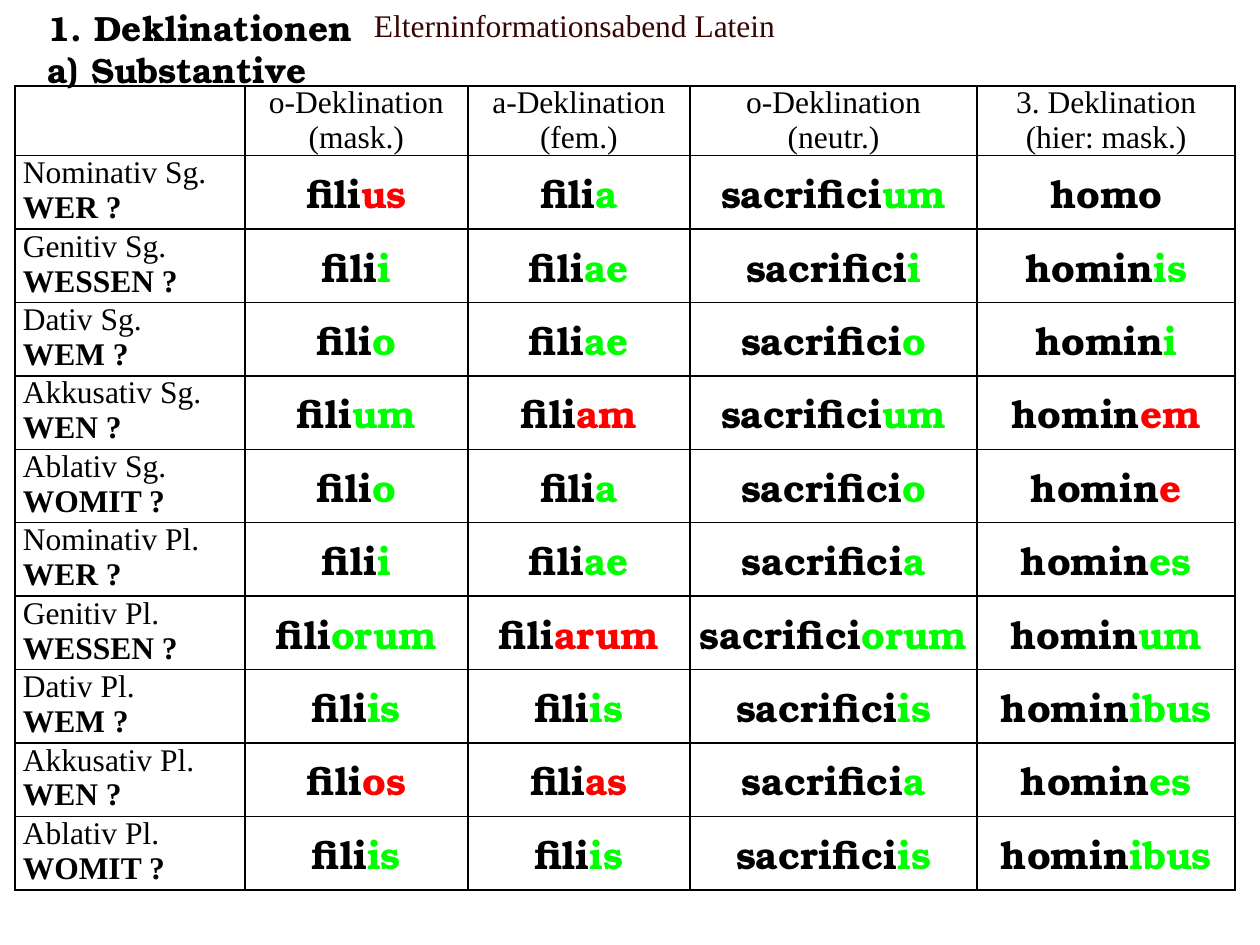
from dataclasses import dataclass

from lxml import etree
from pptx import Presentation
from pptx.dml.color import RGBColor
from pptx.enum.text import MSO_ANCHOR, PP_ALIGN
from pptx.oxml.ns import qn
from pptx.util import Cm, Pt

CENTER, JUSTIFY, LEFT = PP_ALIGN.CENTER, PP_ALIGN.JUSTIFY, PP_ALIGN.LEFT
TOP, MIDDLE = MSO_ANCHOR.TOP, MSO_ANCHOR.MIDDLE


@dataclass(frozen=True)
class Theme:
    serif: str = "Times New Roman"
    display: str = "TeX Gyre Bonum"
    ink: str = "000000"
    regular: str = "00FF00"
    distinctive: str = "FF0000"
    event: str = "380404"
    label_size: int = 18
    heading_size: int = 20
    form_size: int = 22
    border_width: int = 1


THEME = Theme()
COLUMN_WIDTHS = [4.64, 4.49, 4.48, 5.79, 5.2]
HEADER_HEIGHT, CASE_HEIGHT = 1.4, 1.48
HEADERS = [
    "o-Deklination (mask.)",
    "a-Deklination (fem.)",
    "o-Deklination (neutr.)",
    "3. Deklination (hier: mask.)",
]
STEMS = ["fili", "fili", "sacrifici", "homin"]
WHOLE_FORMS = {"homo"}
DISTINCTIVE_ENDINGS = {"us", "am", "em", "e", "arum", "os", "as"}
CASES = [
    ("Nominativ Sg.", "WER ?", ["us", "a", "um", "homo"]),
    ("Genitiv Sg.", "WESSEN ?", ["i", "ae", "i", "is"]),
    ("Dativ Sg.", "WEM ?", ["o", "ae", "o", "i"]),
    ("Akkusativ Sg.", "WEN ?", ["um", "am", "um", "em"]),
    ("Ablativ Sg.", "WOMIT ?", ["o", "a", "o", "e"]),
    ("Nominativ Pl.", "WER ?", ["i", "ae", "a", "es"]),
    ("Genitiv Pl.", "WESSEN ?", ["orum", "arum", "orum", "um"]),
    ("Dativ Pl.", "WEM ?", ["is", "is", "is", "ibus"]),
    ("Akkusativ Pl.", "WEN ?", ["os", "as", "a", "es"]),
    ("Ablativ Pl.", "WOMIT ?", ["is", "is", "is", "ibus"]),
]


def add_run(paragraph, text, font, size, color=THEME.ink, bold=False):
    run = paragraph.add_run()
    run.text = text
    run.font.name = font
    run.font.size = Pt(size)
    run.font.bold = bold
    run.font.color.rgb = RGBColor.from_string(color)


def add_label(paragraph, text, align, bold=False):
    paragraph.alignment = align
    add_run(paragraph, text, THEME.serif, THEME.label_size, bold=bold)


def add_form(paragraph, stem, ending):
    paragraph.alignment = CENTER
    if ending in WHOLE_FORMS:
        parts = [(ending, THEME.ink)]
    else:
        distinctive = ending in DISTINCTIVE_ENDINGS
        parts = [(stem, THEME.ink), (ending, THEME.distinctive if distinctive else THEME.regular)]
    for text, color in parts:
        add_run(paragraph, text, THEME.display, THEME.form_size, color, bold=True)


def format_cell(cell, anchor):
    cell.margin_left = cell.margin_right = Cm(0.16)
    cell.margin_top = cell.margin_bottom = 0
    cell.vertical_anchor = anchor
    properties = cell._tc.get_or_add_tcPr()
    for side in ("lnL", "lnR", "lnT", "lnB"):
        border = etree.SubElement(properties, qn(f"a:{side}"), w=str(Pt(THEME.border_width)))
        fill = etree.SubElement(border, qn("a:solidFill"))
        etree.SubElement(fill, qn("a:srgbClr"), val=THEME.ink)
    cell.fill.background()


def add_declension_table(slide):
    height = HEADER_HEIGHT + CASE_HEIGHT * len(CASES)
    table = slide.shapes.add_table(
        len(CASES) + 1, len(COLUMN_WIDTHS), Cm(0.3), Cm(1.73), Cm(sum(COLUMN_WIDTHS)), Cm(height)
    ).table
    table.first_row = table.horz_banding = False
    for column, width in zip(table.columns, COLUMN_WIDTHS):
        column.width = Cm(width)
    for index, row in enumerate(table.rows):
        row.height = Cm(CASE_HEIGHT if index else HEADER_HEIGHT)
        for position, cell in enumerate(row.cells):
            format_cell(cell, MIDDLE if index and position else TOP)

    for column, header in enumerate(HEADERS, 1):
        add_label(table.cell(0, column).text_frame.paragraphs[0], header, CENTER)
    for row, (case, question, endings) in enumerate(CASES, 1):
        label = table.cell(row, 0).text_frame
        add_label(label.paragraphs[0], case, JUSTIFY)
        add_label(label.add_paragraph(), question, JUSTIFY, bold=True)
        for column, (stem, ending) in enumerate(zip(STEMS, endings), 1):
            add_form(table.cell(row, column).text_frame.paragraphs[0], stem, ending)


def add_text(slide, left, width, height, lines, font, size, color, bold=False):
    frame = slide.shapes.add_textbox(Cm(left), 0, Cm(width), Cm(height)).text_frame
    frame.word_wrap = True
    for index, line in enumerate(lines):
        paragraph = frame.add_paragraph() if index else frame.paragraphs[0]
        paragraph.alignment = LEFT
        add_run(paragraph, line, font, size, color, bold)


def main():
    presentation = Presentation()
    presentation.slide_width, presentation.slide_height = Cm(25.4), Cm(19.05)
    slide = presentation.slides.add_slide(presentation.slide_layouts[6])
    add_declension_table(slide)
    add_text(slide, 0.71, 12.7, 1.96, ["1. Deklinationen", "a) Substantive"],
             THEME.display, THEME.heading_size, THEME.ink, bold=True)
    add_text(slide, 7.29, 10.52, 1.02, ["Elterninformationsabend Latein"],
             THEME.serif, THEME.label_size, THEME.event)
    presentation.save("out.pptx")


if __name__ == "__main__":
    main()
